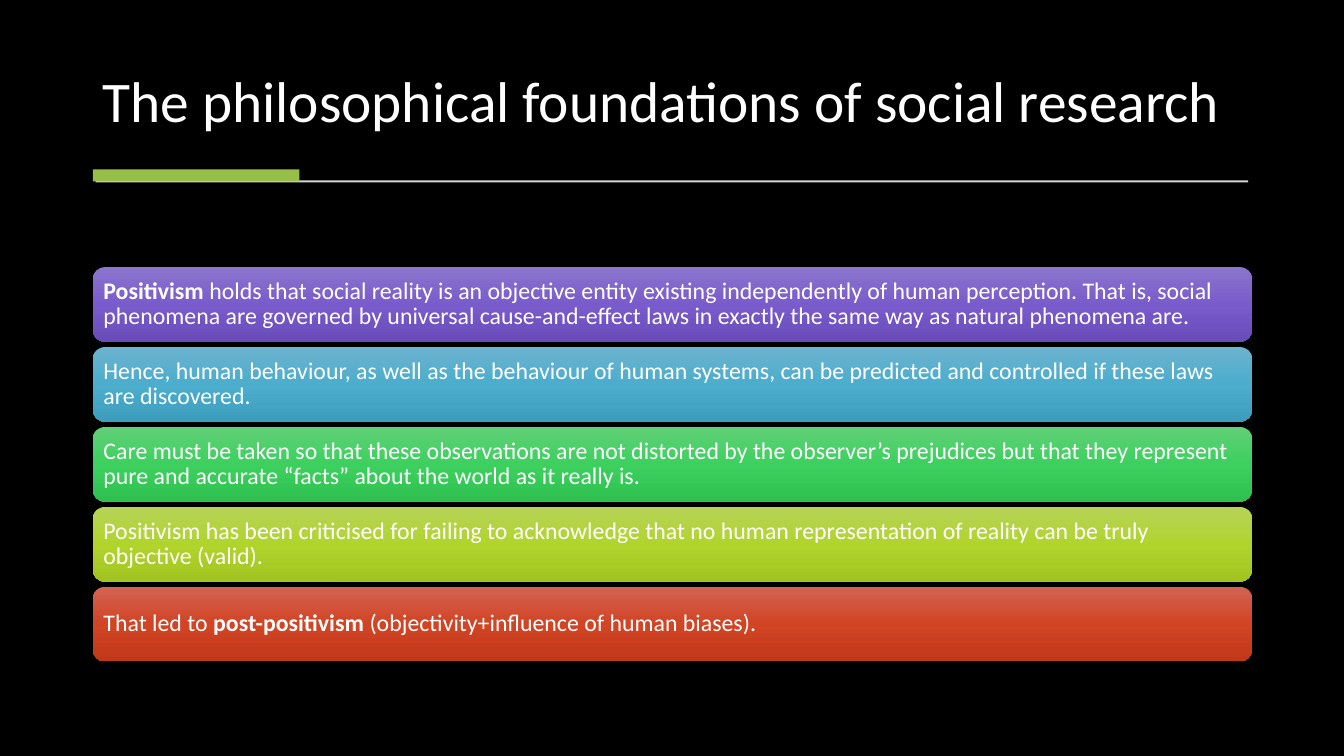
from copy import deepcopy

from pptx import Presentation
from pptx.dml.color import RGBColor
from pptx.enum.shapes import MSO_SHAPE
from pptx.enum.text import MSO_ANCHOR, PP_ALIGN
from pptx.util import Inches, Pt

RECT, ROUND = MSO_SHAPE.RECTANGLE, MSO_SHAPE.ROUNDED_RECTANGLE
MIDDLE, BOTTOM = MSO_ANCHOR.MIDDLE, MSO_ANCHOR.BOTTOM
LEFT = PP_ALIGN.LEFT

TITLE = "The philosophical foundations of social research"
# Each bar: three gradient colours, then runs of (text, bold)
BARS = [
    (("8B75CD", "7A5BCB", "6A4BBA"), [
        ("Positivism", True),
        (" holds that social reality is an objective entity existing "
         "independently of human perception. That is, social phenomena are "
         "governed by universal cause-and-effect laws in exactly the same "
         "way as natural phenomena are.", False)]),
    (("6BB3CE", "4CADCD", "3D9DBD"), [
        ("Hence, human behaviour, as well as the behaviour of human systems, "
         "can be predicted and controlled if these laws are discovered.",
         False)]),
    (("61D077", "3DD05F", "2FC150"), [
        ("Care must be taken so that these observations are not distorted by "
         "the observer’s prejudices but that they represent pure and "
         "accurate “facts” about the world as it really is.", False)]),
    (("B6D358", "B1D42D", "A2C420"), [
        ("Positivism has been criticised for failing to acknowledge that no "
         "human representation of reality can be truly objective (valid).",
         False)]),
    (("D36353", "D14424", "C13819"), [
        ("That led to ", False),
        ("post-positivism ", True),
        ("(objectivity+influence of human biases).", False)]),
]
RULES = [((0.95, 1.79, 11.43, 0.02), "D5D5D5"),
         ((0.92, 1.68, 2.05, 0.12), "97BE49")]
EDGE, TOP, WIDTH, HIGH = 0.92, 2.65, 11.5, 0.74
STEP = 0.793
PAD = Inches(0.1)


def color(code):
    return RGBColor.from_string(code)


def add_box(slide, kind, place):
    box = slide.shapes.add_shape(kind, *map(Inches, place))
    box.shadow.inherit = False
    box.line.fill.background()
    return box


def shade(box, codes):
    """Fill from top to bottom with three evenly spaced colours."""
    fill = box.fill
    fill.gradient()
    fill.gradient_angle = 270
    first = box.element.spPr.xpath(".//a:gs")[0]
    first.addnext(deepcopy(first))
    for i, (stop, code) in enumerate(zip(fill.gradient_stops, codes)):
        stop.position = i / 2
        stop.color.rgb = color(code)


def write(frame, runs, size, anchor):
    frame.word_wrap = True
    frame.vertical_anchor = anchor
    para = frame.paragraphs[0]
    para.alignment = LEFT
    para.line_spacing = 0.9
    for text, bold in runs:
        run = para.add_run()
        run.text = text
        look = {"name": "Calibri", "size": Pt(size), "bold": bold}
        for key, value in look.items():
            setattr(run.font, key, value)
        run.font.color.rgb = color("FFFFFF")


deck = Presentation()
deck.slide_width, deck.slide_height = Inches(13.33), Inches(7.5)
slide = deck.slides.add_slide(deck.slide_layouts[6])
slide.background.fill.solid()
slide.background.fill.fore_color.rgb = color("000000")

head = slide.shapes.add_textbox(*map(Inches, (EDGE, 0.28, 11.49, 1.11)))
write(head.text_frame, [(TITLE, False)], 41, BOTTOM)

for place, code in RULES:
    rule = add_box(slide, RECT, place)
    rule.fill.solid()
    rule.fill.fore_color.rgb = color(code)

for i, (codes, runs) in enumerate(BARS):
    bar = add_box(slide, ROUND, (EDGE, TOP + i * STEP, WIDTH, HIGH))
    shade(bar, codes)
    frame = bar.text_frame
    for side in ("left", "right", "top", "bottom"):
        setattr(frame, "margin_" + side, Inches(0.07))
    write(frame, runs, 17, MIDDLE)

deck.save("out.pptx")
